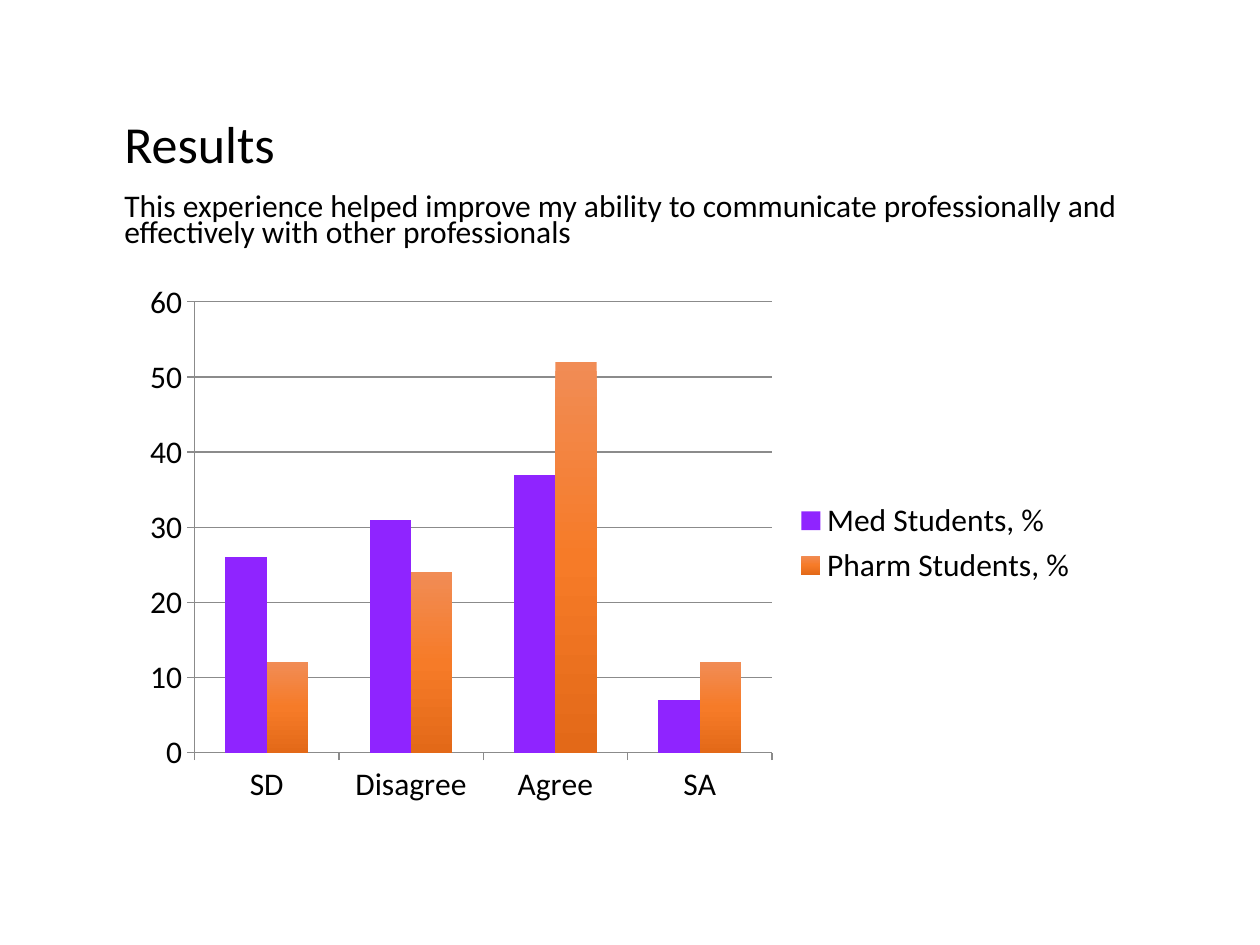
from pptx import Presentation
from pptx.chart.data import CategoryChartData
from pptx.dml.color import RGBColor
from pptx.enum.chart import XL_CHART_TYPE as ChartType, XL_LEGEND_POSITION as LegendPos
from pptx.enum.chart import XL_TICK_MARK as TickMark
from pptx.enum.text import MSO_ANCHOR as Anchor
from pptx.oxml import parse_xml
from pptx.oxml.ns import nsdecls
from pptx.util import Pt

PX = 914400 / 126
FONT = "Calibri"
BLACK = RGBColor(0x00, 0x00, 0x00)
GRAY = RGBColor(0x8B, 0x8B, 0x8B)
PURPLE = RGBColor(0x8F, 0x24, 0xFF)
# Orange shades from the top of a column to its base
ORANGES = {
    0: RGBColor(0xF1, 0x8C, 0x55),
    50: RGBColor(0xF6, 0x7B, 0x28),
    100: RGBColor(0xE3, 0x69, 0x18),
}

ANSWERS = ["SD", "Disagree", "Agree", "SA"]
SHARES = {
    "Med Students, %": [26, 31, 37, 7],
    "Pharm Students, %": [12, 24, 52, 12],
}
HEADING = [
    ("Results", 29.7, 0),
    ("This experience helped improve my ability to communicate professionally "
     "and effectively with other professionals", 18, 13.5),
]


def px(length):
    return round(length * PX)


def set_all(target, values):
    for name, value in values.items():
        setattr(target, name, value)


def style_font(font, size):
    set_all(font, {"name": FONT, "size": Pt(size), "bold": False})
    font.color.rgb = BLACK


def fill_gradient(series, shades):
    stops = "".join(f'<a:gs pos="{percent * 1000}"><a:srgbClr val="{shade}"/></a:gs>'
                    for percent, shade in shades.items())
    properties = series._element.get_or_add_spPr()
    properties.insert(0, parse_xml(
        f'<a:gradFill {nsdecls("a")} rotWithShape="1"><a:gsLst>{stops}</a:gsLst>'
        '<a:lin ang="5400000" scaled="0"/></a:gradFill>'))


def add_heading(slide, left, top, width, height):
    frame = slide.shapes.add_textbox(*map(px, (left, top, width, height))).text_frame
    set_all(frame, {"word_wrap": True, "vertical_anchor": Anchor.TOP,
                    "margin_top": 0, "margin_bottom": 0})
    for index, (wording, size, gap) in enumerate(HEADING):
        paragraph = frame.add_paragraph() if index else frame.paragraphs[0]
        set_all(paragraph, {"line_spacing": 0.7, "space_before": Pt(gap)})
        run = paragraph.add_run()
        run.text = wording
        style_font(run.font, size)


def add_answer_chart(slide, left, top, width, height):
    answers = CategoryChartData()
    answers.categories = ANSWERS
    for group, shares in SHARES.items():
        answers.add_series(group, shares)
    chart = slide.shapes.add_chart(
        ChartType.COLUMN_CLUSTERED, *map(px, (left, top, width, height)), answers).chart
    set_all(chart, {"has_title": False, "has_legend": True})
    style_font(chart.font, 18)
    set_all(chart.legend, {"position": LegendPos.RIGHT, "include_in_layout": False})

    # Columns
    columns = chart.plots[0]
    set_all(columns, {"gap_width": 150, "overlap": 0, "vary_by_categories": False})
    med, pharm = columns.series
    med.format.fill.solid()
    med.format.fill.fore_color.rgb = PURPLE
    fill_gradient(pharm, ORANGES)

    # Axes and gridlines
    share_axis = chart.value_axis
    set_all(share_axis, {"minimum_scale": 0, "maximum_scale": 60, "major_unit": 10,
                         "has_major_gridlines": True})
    for axis in (chart.category_axis, share_axis):
        set_all(axis, {"major_tick_mark": TickMark.OUTSIDE,
                       "minor_tick_mark": TickMark.NONE})
    for part in (chart.category_axis, share_axis, share_axis.major_gridlines):
        part.format.line.color.rgb = GRAY
        part.format.line.width = Pt(0.75)


def main():
    deck = Presentation()
    set_all(deck, {"slide_width": px(1260), "slide_height": px(945)})
    slide = deck.slides.add_slide(deck.slide_layouts[6])
    add_heading(slide, 112, 129, 1099, 166)
    add_answer_chart(slide, 131, 272, 959, 542)
    deck.save("out.pptx")


if __name__ == "__main__":
    main()
